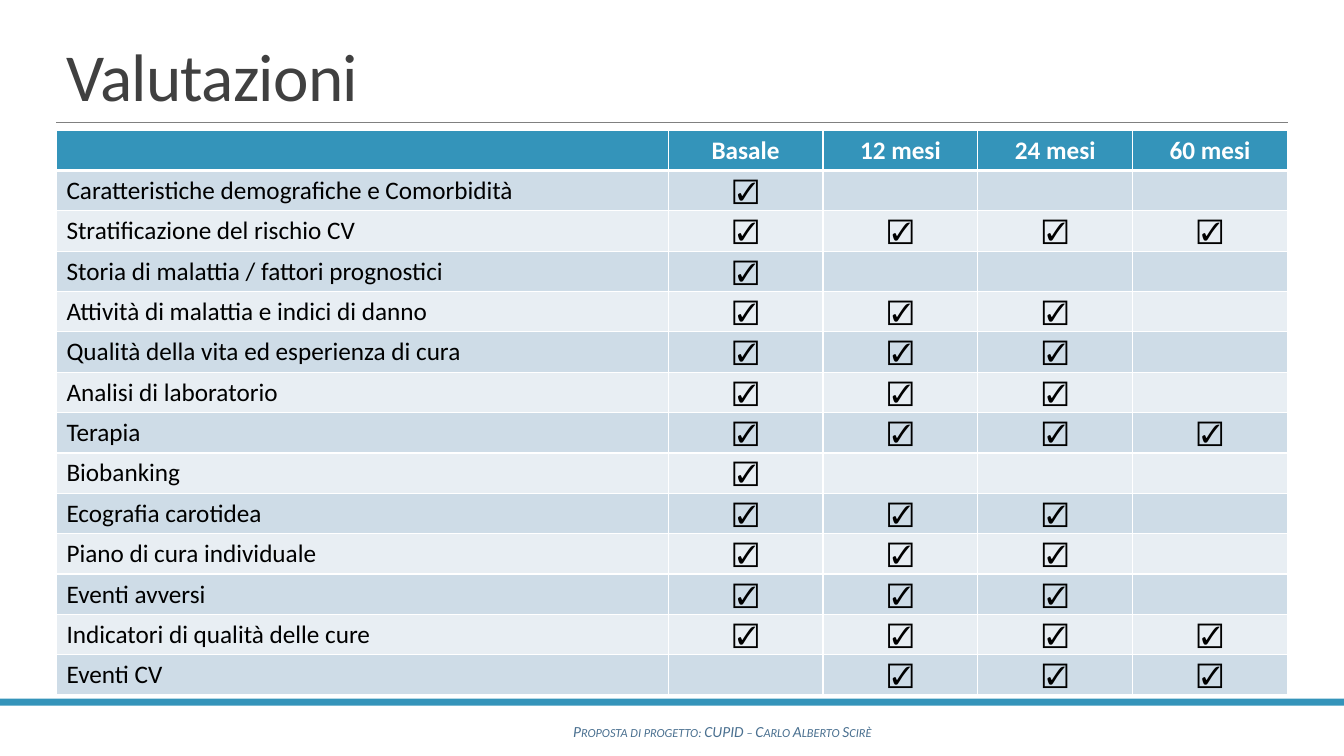
from dataclasses import dataclass
from typing import Optional

import pptx
import pptx.dml.color
import pptx.enum.shapes
import pptx.enum.text
import pptx.oxml.ns
import pptx.util
from lxml import etree

ALIGN = pptx.enum.text.PP_ALIGN
ANCHOR = pptx.enum.text.MSO_ANCHOR


@dataclass(frozen=True)
class Theme:
    font: str = "Calibri"
    accent: str = "3494BA"
    rule: str = "808080"
    title: str = "404040"
    footer: str = "4A7090"
    body: str = "000000"
    white: str = "FFFFFF"
    bands: tuple[str, str] = ("CEDCE7", "E8EEF3")
    title_size: int = 48
    table_size: int = 18
    footer_size: int = 11


@dataclass(frozen=True)
class Area:
    left: float
    top: float
    width: float
    height: float


@dataclass(frozen=True)
class Caption:
    text: str
    area: Area
    size: int
    color: str
    align: Optional[ALIGN] = None
    anchor: ANCHOR = ANCHOR.TOP
    italic: bool = False
    line_spacing: Optional[float] = None
    effects: tuple[tuple[str, str], ...] = ()


@dataclass(frozen=True)
class Assessment:
    name: str
    visits: str


THEME = Theme()
SLIDE_WIDTH = pptx.util.Inches(13.33)
SLIDE_HEIGHT = pptx.util.Inches(7.5)
MARGIN, CONTENT_WIDTH = 4.2, 91.6
VISIT_WIDTH = 11.52
RULE_TOP = 16.13
FOOTER_BAND = Area(0, 92.4, 100, 0.93)
SCHEDULE_AREA = Area(MARGIN, 17.2, CONTENT_WIDTH, 74.67)

VISITS = ("Basale", "12 mesi", "24 mesi", "60 mesi")
ASSESSMENTS = (
    Assessment("Caratteristiche demografiche e Comorbidità", "x---"),
    Assessment("Stratificazione del rischio CV", "xxxx"),
    Assessment("Storia di malattia / fattori prognostici", "x---"),
    Assessment("Attività di malattia e indici di danno", "xxx-"),
    Assessment("Qualità della vita ed esperienza di cura", "xxx-"),
    Assessment("Analisi di laboratorio", "xxx-"),
    Assessment("Terapia", "xxxx"),
    Assessment("Biobanking", "x---"),
    Assessment("Ecografia carotidea", "xxx-"),
    Assessment("Piano di cura individuale", "xxx-"),
    Assessment("Eventi avversi", "xxx-"),
    Assessment("Indicatori di qualità delle cure", "xxxx"),
    Assessment("Eventi CV", "-xxx"),
)
CAPTIONS = (
    Caption("Proposta di progetto: CUPID – Carlo Alberto Scirè",
            Area(19.35, 94.8, 68.79, 3.87), THEME.footer_size, THEME.footer,
            align=ALIGN.CENTER, italic=True, effects=(("cap", "small"),)),
    Caption("Valutazioni", Area(MARGIN, 4.13, CONTENT_WIDTH, 11.73),
            THEME.title_size, THEME.title, anchor=ANCHOR.BOTTOM,
            line_spacing=0.85, effects=(("spc", "-50"),)),
)


def across(percent: float) -> int:
    return round(SLIDE_WIDTH * percent / 100)


def down(percent: float) -> int:
    return round(SLIDE_HEIGHT * percent / 100)


def place(area: Area) -> tuple[int, int, int, int]:
    return across(area.left), down(area.top), across(area.width), down(area.height)


def rgb(color: str) -> pptx.dml.color.RGBColor:
    return pptx.dml.color.RGBColor.from_string(color)


def style(paragraph, size: int, color: str, bold: bool = False, italic: bool = False) -> None:
    font = paragraph.font
    font.name, font.size = THEME.font, pptx.util.Pt(size)
    font.bold, font.italic = bold, italic
    font.color.rgb = rgb(color)


def draw_footer_band(slide) -> None:
    band = slide.shapes.add_shape(
        pptx.enum.shapes.MSO_SHAPE.RECTANGLE, *place(FOOTER_BAND))
    band.shadow.inherit = False
    band.fill.solid()
    band.fill.fore_color.rgb = rgb(THEME.accent)
    band.line.fill.background()


def draw_title_rule(slide) -> None:
    rule = slide.shapes.add_connector(
        pptx.enum.shapes.MSO_CONNECTOR.STRAIGHT, across(MARGIN), down(RULE_TOP),
        across(MARGIN + CONTENT_WIDTH), down(RULE_TOP))
    rule.line.color.rgb = rgb(THEME.rule)
    rule.line.width = pptx.util.Pt(0.5)
    etree.SubElement(rule._element.spPr, pptx.oxml.ns.qn("a:effectLst"))


def draw_caption(slide, caption: Caption) -> None:
    frame = slide.shapes.add_textbox(*place(caption.area)).text_frame
    frame.word_wrap = True
    frame.vertical_anchor = caption.anchor
    paragraph = frame.paragraphs[0]
    run = paragraph.add_run()
    run.text = caption.text
    paragraph.alignment = caption.align
    paragraph.line_spacing = caption.line_spacing
    style(paragraph, caption.size, caption.color, italic=caption.italic)
    for effect, value in caption.effects:
        run._r.get_or_add_rPr().set(effect, value)


def draw_borders(cell, top: int, bottom: int) -> None:
    properties = cell._tc.get_or_add_tcPr()
    for side, points in (("L", 1), ("R", 1), ("T", top), ("B", bottom)):
        border = etree.SubElement(properties, pptx.oxml.ns.qn(f"a:ln{side}"),
                                  w=str(pptx.util.Pt(points)))
        fill = etree.SubElement(border, pptx.oxml.ns.qn("a:solidFill"))
        etree.SubElement(fill, pptx.oxml.ns.qn("a:srgbClr"), val=THEME.white)


def draw_cell(cell, text: str, row: int, column: int) -> None:
    header = row == 0
    draw_borders(cell, top=3 if row == 1 else 1, bottom=3 if header else 1)
    cell.fill.solid()
    cell.fill.fore_color.rgb = rgb(THEME.accent if header else THEME.bands[(row - 1) % 2])
    paragraph = cell.text_frame.paragraphs[0]
    if text:
        paragraph.text = text
    if column:
        paragraph.alignment = ALIGN.CENTER
    style(paragraph, THEME.table_size, THEME.white if header else THEME.body, bold=header)


def draw_schedule(slide) -> None:
    rows = [("", *VISITS)] + [
        (item.name, *("☑" if mark == "x" else "" for mark in item.visits))
        for item in ASSESSMENTS]
    schedule = slide.shapes.add_table(
        len(rows), len(rows[0]), *place(SCHEDULE_AREA)).table
    name_width = CONTENT_WIDTH - VISIT_WIDTH * len(VISITS)
    for column, width in enumerate([name_width] + [VISIT_WIDTH] * len(VISITS)):
        schedule.columns[column].width = across(width)
    for row, texts in enumerate(rows):
        for column, text in enumerate(texts):
            draw_cell(schedule.cell(row, column), text, row, column)


def main() -> None:
    presentation = pptx.Presentation()
    presentation.slide_width, presentation.slide_height = SLIDE_WIDTH, SLIDE_HEIGHT
    slide = presentation.slides.add_slide(presentation.slide_layouts[6])
    draw_footer_band(slide)
    draw_title_rule(slide)
    for caption in CAPTIONS:
        draw_caption(slide, caption)
    draw_schedule(slide)
    presentation.save("out.pptx")


if __name__ == "__main__":
    main()
